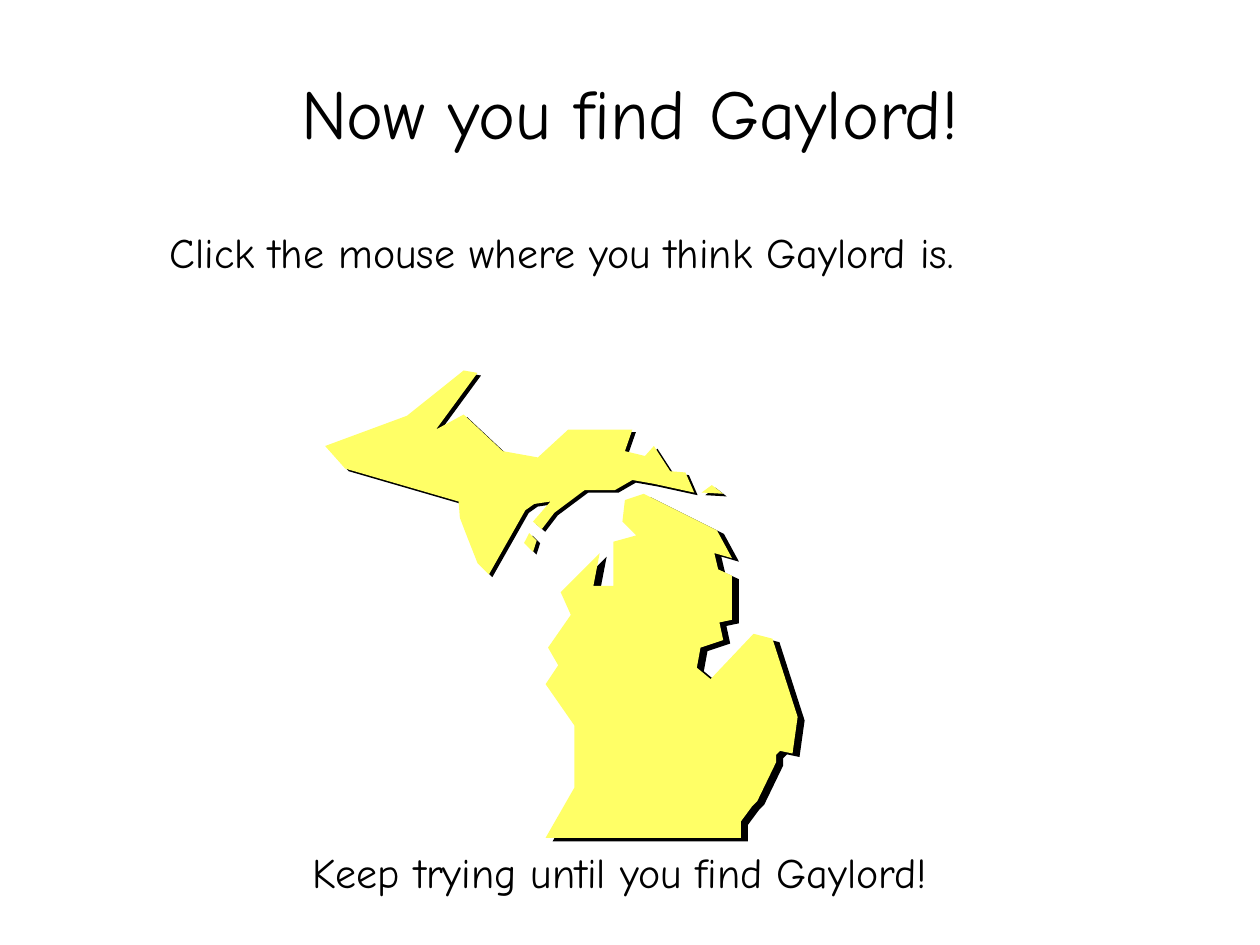
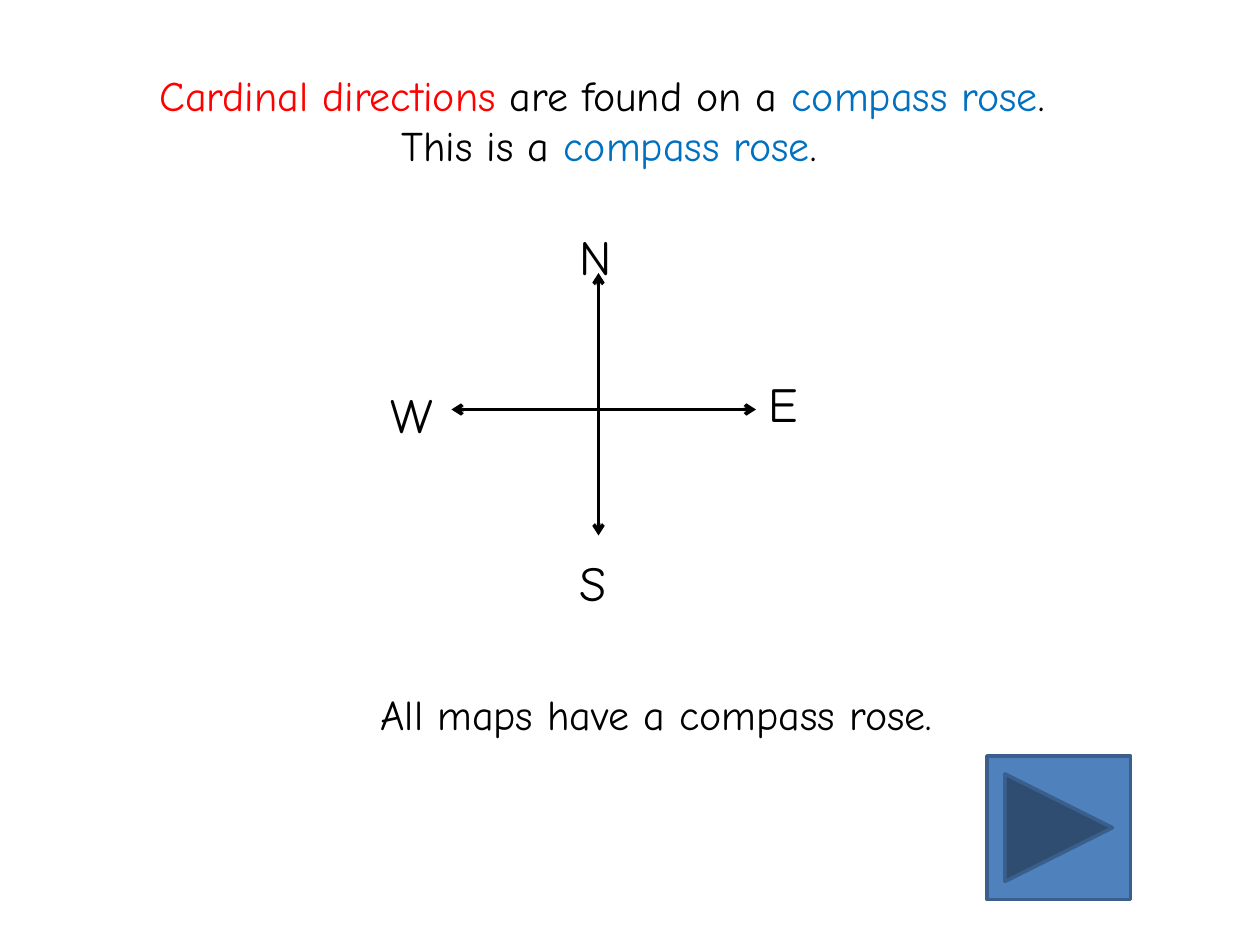
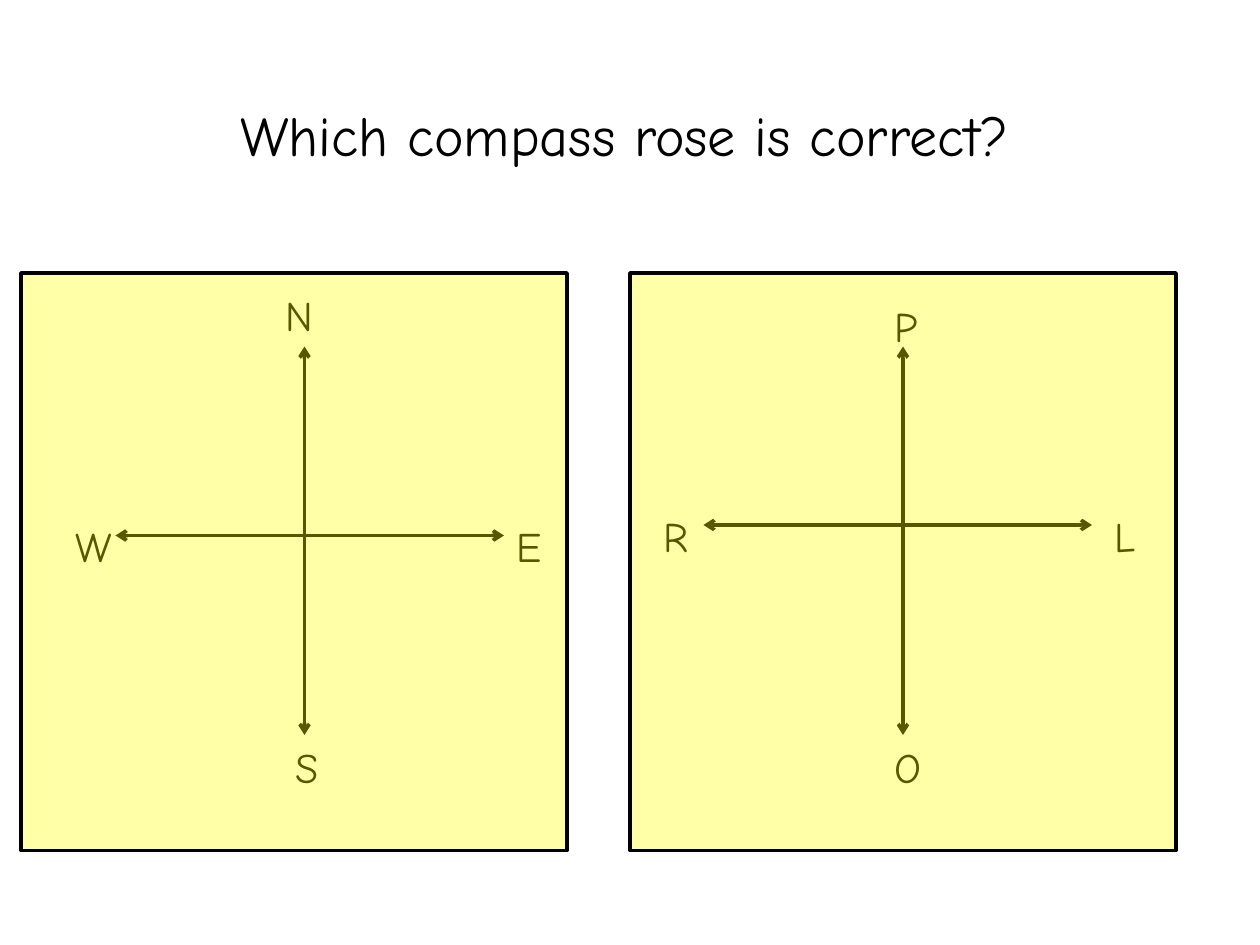
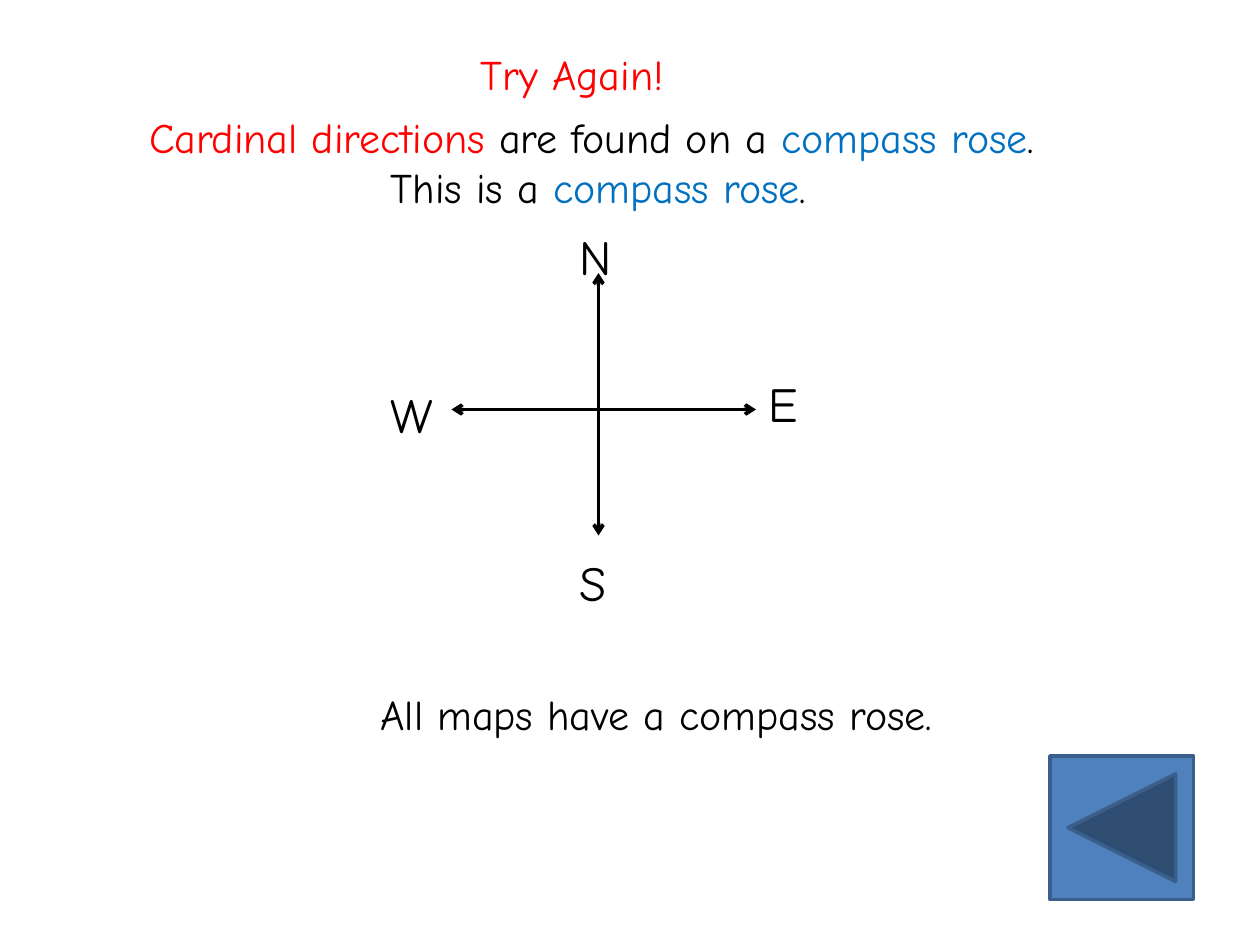
import pptx
import pptx.dml.color
import pptx.enum.shapes
import pptx.enum.text
import pptx.oxml
import pptx.oxml.ns
import pptx.util

Pt = pptx.util.Pt
SHAPES = pptx.enum.shapes.MSO_SHAPE
ALIGN = pptx.enum.text.PP_ALIGN
NAMESPACE = pptx.oxml.ns.nsdecls("a")

# Shared style
FONT = "Comic Neue"
BLACK, RED, BLUE = "000000", "FF0000", "0070C0"
MAP_YELLOW, PANEL_YELLOW = "FFFF66", "FFFF00"
BUTTON_FILL, BUTTON_LINE = "4F81BD", "3A5F8C"
LINE_WIDTH = 2

# Wording that two slides share
DIRECTIONS = [("Cardinal directions ", RED), ("are found on a ", BLACK),
              ("compass rose", BLUE), (".  This is a ", BLACK),
              ("compass rose", BLUE), (".", BLACK)]

# Map outlines as (x, y) in points
UPPER_PENINSULA = [
    (185.8, 254.9), (232.6, 237.6), (265, 211.7), (272.9, 213.1), (249.1, 245.5),
    (265, 236.9), (287.3, 257.8), (307.4, 261.4), (324.7, 245.5), (361.4, 245.5),
    (357.1, 257.8), (368.6, 260.6), (373.7, 254.9), (383, 269.3), (391.7, 270),
    (396.7, 281.5), (373.7, 276.5), (361.4, 274.3), (351.4, 280.1), (334.1, 280.1),
    (316.8, 293), (309.6, 302.4), (304.6, 298.1), (314.6, 286.6), (305.3, 288),
    (300.2, 291.6), (279.4, 328.3), (272.9, 321.8), (266.4, 305.3), (262.8, 295.9),
    (262.1, 286.6), (197.3, 267.8)]
LOWER_PENINSULA = [
    (311.8, 478.8), (328.3, 450), (328.3, 414.7), (311.8, 391), (319, 380.2),
    (313.2, 370.1), (326.2, 351.4), (320.4, 338.4), (342.7, 316.1), (339.1, 334.8),
    (350.6, 334.8), (350.6, 309.6), (363.6, 306), (355.7, 298.1), (357.1, 285.8),
    (367.9, 282.2), (409.7, 303.1), (418.3, 319), (408.2, 316.1), (410.4, 325.4),
    (418.3, 329), (418.3, 354.2), (411.1, 355.7), (413.3, 365.8), (400.3, 370.1),
    (398.2, 381.6), (406.1, 388.1), (430.6, 362.2), (441.4, 365), (455.8, 409.7),
    (452.9, 430.6), (445.7, 429.1), (443.5, 431.3), (443.5, 435.6), (432.7, 457.9),
    (429.8, 460.8), (423.4, 469.4), (423.4, 478.8)]
WEST_ISLAND = [(302.4, 304.6), (299.5, 310.3), (304.6, 315.4), (306.7, 308.9)]
EAST_ISLAND = [(406.8, 277.2), (401, 281.5), (413.3, 282.2)]
# Each outline with the offset of its shadow
MAP_PARTS = [(UPPER_PENINSULA, (2, 1.5)), (LOWER_PENINSULA, (4, 2)),
             (WEST_ISLAND, (2, 1.5)), (EAST_ISLAND, (2, 1.5))]


def color(hex_string):
    return pptx.dml.color.RGBColor.from_string(hex_string)


def apply(target, values):
    for name, value in values.items():
        setattr(target, name, value)


def place(shape, box):
    apply(shape, dict(zip(("left", "top", "width", "height"), map(Pt, box))))


def write(shape, runs, size, align):
    """Fill a text shape with one paragraph of coloured runs."""
    frame = shape.text_frame
    apply(frame, {"word_wrap": True,
                  "auto_size": pptx.enum.text.MSO_AUTO_SIZE.SHAPE_TO_FIT_TEXT,
                  "vertical_anchor": pptx.enum.text.MSO_ANCHOR.TOP})
    paragraph = frame.paragraphs[0]
    paragraph.alignment = align
    for text, run_color in runs:
        run = paragraph.add_run()
        run.text = text
        apply(run.font, {"name": FONT, "size": Pt(size)})
        run.font.color.rgb = color(run_color)


def add_slide(presentation, title_runs, box, size=24):
    slide = presentation.slides.add_slide(presentation.slide_layouts[5])
    place(slide.shapes.title, box)
    write(slide.shapes.title, title_runs, size, ALIGN.CENTER)
    return slide


def add_text(slide, runs, box, size=24, align=ALIGN.CENTER):
    write(slide.shapes.add_textbox(*map(Pt, box)), runs, size, align)


def add_box(slide, kind, box, fill, line, opacity=100):
    shape = slide.shapes.add_shape(kind, *map(Pt, box))
    shape.shadow.inherit = False
    shape.fill.solid()
    shape.fill.fore_color.rgb = color(fill)
    shape.line.color.rgb = color(line)
    shape.line.width = Pt(LINE_WIDTH)
    if opacity < 100:
        fill_color = shape.fill._xPr.find(".//" + pptx.oxml.ns.qn("a:srgbClr"))
        fill_color.append(pptx.oxml.parse_xml(
            f'<a:alpha {NAMESPACE} val="{opacity * 1000}"/>'))


def add_double_arrow(slide, start, end):
    connector = slide.shapes.add_connector(
        pptx.enum.shapes.MSO_CONNECTOR.STRAIGHT, *map(Pt, start + end))
    connector.line.color.rgb = color(BLACK)
    connector.line.width = Pt(LINE_WIDTH)
    line = connector.line._get_or_add_ln()
    for tag in ("headEnd", "tailEnd"):
        line.append(pptx.oxml.parse_xml(f'<a:{tag} {NAMESPACE} type="arrow"/>'))
    connector._element.spPr.append(
        pptx.oxml.parse_xml(f"<a:effectLst {NAMESPACE}/>"))


def add_compass(slide, center, x_range, y_range, labels, size):
    """Two crossing arrows, and labels given as (letter, left, top, width)."""
    x, y = center
    add_double_arrow(slide, (x, y_range[0]), (x, y_range[1]))
    add_double_arrow(slide, (x_range[0], y), (x_range[1], y))
    for letter, left, top, width in labels:
        add_text(slide, [(letter, BLACK)], (left, top, width, size * 1.5),
                 size, ALIGN.LEFT)


def add_outline(shapes, points, fill):
    corners = [(Pt(x), Pt(y)) for x, y in points]
    builder = shapes.build_freeform(*corners[0])
    builder.add_line_segments(corners[1:], close=True)
    shape = builder.convert_to_shape()
    shape.shadow.inherit = False
    shape.fill.solid()
    shape.fill.fore_color.rgb = color(fill)
    shape.line.fill.background()


def add_map(slide):
    group = slide.shapes.add_group_shape()
    for points, (dx, dy) in MAP_PARTS:
        add_outline(group.shapes, [(x + dx, y + dy) for x, y in points], BLACK)
    for points, _ in MAP_PARTS:
        add_outline(group.shapes, points, MAP_YELLOW)


def add_lesson(slide, button, button_left):
    """Compass rose, closing sentence and navigation button."""
    add_compass(slide, (342, 234), (258, 432), (156, 306),
                [("N", 324, 126, 36), ("E", 432, 210, 36),
                 ("S", 324, 312, 48), ("W", 216, 216, 42)], 28)
    add_text(slide, [("All maps have a compass rose.", BLACK)], (78, 390, 594, 36))
    add_box(slide, button, (button_left, 432, 82, 82), BUTTON_FILL, BUTTON_LINE)


def main():
    presentation = pptx.Presentation()
    apply(presentation, {"slide_width": Pt(720), "slide_height": Pt(540)})

    # Find the town on the map
    slide = add_slide(presentation, [("Now you find Gaylord!", BLACK)],
                      (96, 36, 528, 55.5), 40)
    add_text(slide, [("Click the mouse where you think Gaylord is.", BLACK)],
             (90, 126, 570, 36), align=ALIGN.LEFT)
    add_map(slide)
    add_text(slide, [("Keep trying until you find Gaylord!", BLACK)],
             (48, 480, 612, 36))

    # Lesson
    slide = add_slide(presentation, DIRECTIONS, (66, 36, 564, 65.5))
    add_lesson(slide, SHAPES.ACTION_BUTTON_FORWARD_OR_NEXT, 564)

    # Question with two answers under translucent panels
    slide = add_slide(presentation, [("Which compass rose is correct?", BLACK)],
                      (102, 54, 510, 46), 32)
    add_compass(slide, (174, 306), (66, 288), (198, 420),
                [("N", 156, 162, 36), ("S", 162, 420, 32),
                 ("E", 288, 294, 30), ("W", 36, 294, 40)], 24)
    add_compass(slide, (516, 300), (402, 624), (198, 420),
                [("P", 504, 168, 28), ("R", 372, 288, 30),
                 ("O", 504, 420, 34), ("L", 630, 288, 28)], 24)
    for left in (12, 360):
        add_box(slide, SHAPES.RECTANGLE, (left, 156, 312, 330),
                PANEL_YELLOW, BLACK, opacity=34)

    # Lesson again after a wrong answer
    slide = add_slide(presentation, [("Try Again!", RED)], (138, 24, 378, 36))
    add_text(slide, DIRECTIONS, (60, 60, 564, 65.5))
    add_lesson(slide, SHAPES.ACTION_BUTTON_BACK_OR_PREVIOUS, 600)

    presentation.save("out.pptx")


if __name__ == "__main__":
    main()
